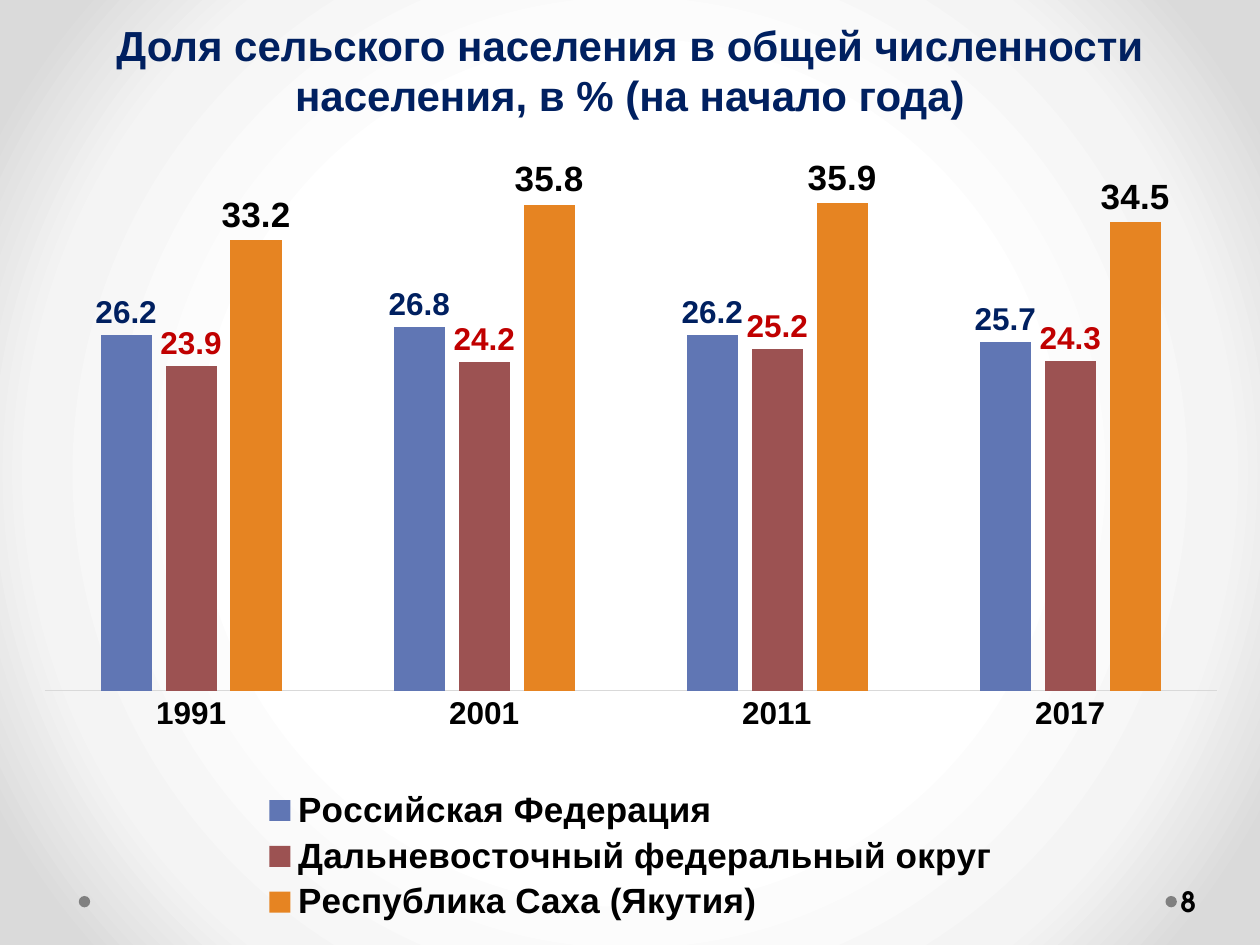
from lxml import etree
from pptx import Presentation
from pptx.chart.data import CategoryChartData
from pptx.dml.color import RGBColor
from pptx.enum.chart import XL_CHART_TYPE, XL_LABEL_POSITION, XL_LEGEND_POSITION, XL_TICK_MARK
from pptx.enum.shapes import MSO_SHAPE
from pptx.enum.text import MSO_ANCHOR, PP_ALIGN
from pptx.oxml.ns import qn
from pptx.util import Pt

COLUMNS = XL_CHART_TYPE.COLUMN_CLUSTERED
OUTSIDE = XL_LABEL_POSITION.OUTSIDE_END
BOTTOM = XL_LEGEND_POSITION.BOTTOM
NO_TICK = XL_TICK_MARK.NONE
OVAL = MSO_SHAPE.OVAL
CENTER, LEFT = PP_ALIGN.CENTER, PP_ALIGN.LEFT
ANCHOR_BOTTOM, ANCHOR_MIDDLE = MSO_ANCHOR.BOTTOM, MSO_ANCHOR.MIDDLE

YEARS = ["1991", "2001", "2011", "2017"]
REGIONS = [
    ("Российская Федерация", (26.2, 26.8, 26.2, 25.7), "6076B4", "002060", 18),
    ("Дальневосточный федеральный округ", (23.9, 24.2, 25.2, 24.3), "9C5252", "C00000", 18),
    ("Республика Саха (Якутия)", (33.2, 35.8, 35.9, 34.5), "E68422", "000000", 20),
]


def rgb(value):
    """Turn a hex string into a colour."""
    return RGBColor.from_string(value)


def set_layout(parent, index, x, y, w, h, inner=False):
    """Place a chart part by fractions of the chart area."""
    for old in parent.findall(qn("c:layout")):
        parent.remove(old)
    layout = etree.Element(qn("c:layout"))
    parent.insert(index, layout)
    manual = etree.SubElement(layout, qn("c:manualLayout"))
    values = [("layoutTarget", "inner")] if inner else []
    values += [("xMode", "edge"), ("yMode", "edge"), ("x", x), ("y", y), ("w", w), ("h", h)]
    for tag, value in values:
        etree.SubElement(manual, qn(f"c:{tag}")).set("val", str(value))


class Deck:
    """Style and current slide."""

    font, number_font = "Arial", "TeX Gyre Adventor"
    navy, black, gray, rule = "002060", "000000", "808080", "D9D9D9"

    def __init__(self):
        """Open a 10 by 7.5 inch presentation with one blank slide."""
        self.prs = Presentation()
        self.prs.slide_width, self.prs.slide_height = Pt(720), Pt(540)
        self.s = self.prs.slides.add_slide(self.prs.slide_layouts[6])

    def background(self, stops):
        """Fill the slide with a radial gradient."""
        self.s.background.fill.gradient()
        grad = next(self.s.element.iter(qn("a:gradFill")))
        for child in list(grad):
            grad.remove(child)
        stop_list = etree.SubElement(grad, qn("a:gsLst"))
        for pos, color in stops:
            gs = etree.SubElement(stop_list, qn("a:gs"), pos=str(pos * 1000))
            etree.SubElement(gs, qn("a:srgbClr"), val=color)
        radial = etree.SubElement(grad, qn("a:path"), {"path": "circle"})
        etree.SubElement(radial, qn("a:fillToRect"), l="50000", t="50000", r="50000", b="50000")

    def dot(self, x, y, size):
        """Add a plain round dot."""
        sp = self.s.shapes.add_shape(OVAL, Pt(x), Pt(y), Pt(size), Pt(size))
        sp.shadow.inherit = False
        sp.fill.solid()
        sp.fill.fore_color.rgb = rgb(self.gray)
        sp.line.fill.background()

    def text(self, x, y, w, h, text, size, color, font, align, anchor, left=7.2, right=7.2):
        """Add a bold text box."""
        tf = self.s.shapes.add_textbox(Pt(x), Pt(y), Pt(w), Pt(h)).text_frame
        tf.word_wrap = True
        tf.vertical_anchor = anchor
        tf.margin_left, tf.margin_right = Pt(left), Pt(right)
        tf.text = text
        p = tf.paragraphs[0]
        p.alignment = align
        self.style(p.runs[0].font, size, color, font)

    def style(self, font, size, color, name):
        """Set a bold font."""
        font.name, font.size, font.bold = name, Pt(size), True
        font.color.rgb = rgb(color)

    def chart(self, x, y, w, h, categories, series):
        """Add the clustered columns with labels and legend."""
        data = CategoryChartData(number_format="0.0")
        data.categories = categories
        for name, values, *_ in series:
            data.add_series(name, values)
        chart = self.s.shapes.add_chart(COLUMNS, Pt(x), Pt(y), Pt(w), Pt(h), data).chart
        chart.has_title = False
        self.style(chart.font, 18, self.black, self.font)
        self.axes(chart)
        plot = chart.plots[0]
        plot.gap_width, plot.overlap, plot.vary_by_categories = 219, -27, False
        for ser, (_, _, fill, color, size) in zip(plot.series, series):
            ser.format.fill.solid()
            ser.format.fill.fore_color.rgb = rgb(fill)
            labels = ser.data_labels
            labels.show_value = True
            labels.position = OUTSIDE
            labels.number_format, labels.number_format_is_linked = "0.0", False
            self.style(labels.font, size, color, self.font)
        chart.has_legend = True
        legend = chart.legend
        legend.position = BOTTOM
        legend.include_in_layout = False
        self.style(legend.font, 20, self.black, self.font)
        root = chart.element
        set_layout(next(root.iter(qn("c:plotArea"))), 0, 0.016, 0.024, 0.968, 0.679, True)
        set_layout(next(root.iter(qn("c:legend"))), 1, 0.19, 0.82, 0.62, 0.18)

    def axes(self, chart):
        """Keep only the category line and its labels."""
        value = chart.value_axis
        value.minimum_scale, value.maximum_scale = 0, 40
        value.has_major_gridlines = False
        value.visible = False
        category = chart.category_axis
        category.major_tick_mark = category.minor_tick_mark = NO_TICK
        category.format.line.color.rgb = rgb(self.rule)
        category.format.line.width = Pt(0.75)


def main():
    """Build and save the slide."""
    deck = Deck()
    deck.background([(50, "FFFFFF"), (76, "F4F4F4"), (92, "DADADA")])
    for x in (666, 45):
        deck.dot(x, 512, 6.5)
    deck.text(36, 15, 648, 57, "Доля сельского населения в общей численности населения, в % (на начало года)",
              24, deck.navy, deck.font, CENTER, ANCHOR_BOTTOM)
    deck.text(672.5, 500.5, 44, 29, "8", 16, deck.black, deck.number_font, LEFT, ANCHOR_MIDDLE, 2, 3.6)
    deck.chart(14.4, 73.5, 692, 457, YEARS, REGIONS)
    deck.prs.save("out.pptx")


if __name__ == "__main__":
    main()
